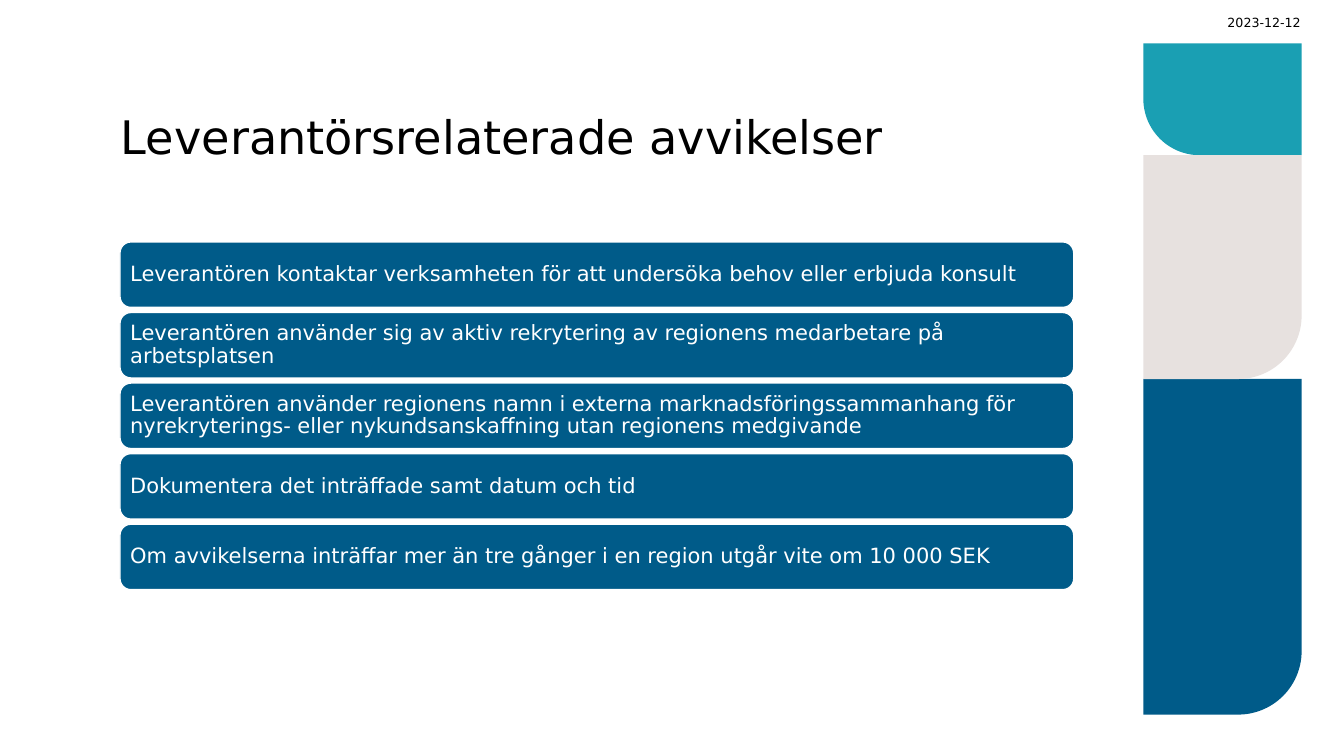
"""Builds a slide listing supplier-related deviations beside a coloured side panel."""
from dataclasses import dataclass
from math import cos, radians, sin

from pptx import Presentation
from pptx.dml.color import RGBColor
from pptx.enum import shapes, text
from pptx.shapes.autoshape import Shape
from pptx.slide import Slide
from pptx.text.text import TextFrame
from pptx.util import Inches, Pt


@dataclass(frozen=True)
class Theme:
    """Colours, font and type sizes of the slide."""
    font: str = "DejaVu Sans"
    black: str = "000000"
    white: str = "FFFFFF"
    teal: str = "1A9FB3"
    sand: str = "E7E1DF"
    blue: str = "005B89"
    title_size: int = 33
    body_size: int = 15
    date_size: int = 9


@dataclass(frozen=True)
class Box:
    """A rectangle in inches."""
    left: float
    top: float
    width: float
    height: float

    def emu(self) -> tuple[int, int, int, int]:
        """Return the rectangle as slide lengths."""
        return (Inches(self.left), Inches(self.top),
                Inches(self.width), Inches(self.height))


@dataclass(frozen=True)
class Block:
    """A side panel block with one rounded corner, counted clockwise from top left."""
    top: float
    height: float
    corner: int
    radius: float
    color: str


THEME = Theme()
BOTTOM_RIGHT, BOTTOM_LEFT = 2, 3
PANEL_LEFT, PANEL_WIDTH = 11.34, 1.57
BLOCKS = [
    Block(0.43, 1.11, BOTTOM_LEFT, 0.56, THEME.teal),
    Block(3.76, 3.33, BOTTOM_RIGHT, 0.63, THEME.blue),
    Block(1.54, 2.22, BOTTOM_RIGHT, 0.63, THEME.sand),
]
TITLE_BOX = Box(1.2, 0.47, 9.45, 1.15)
DATE_BOX = Box(11.92, 0.15, 0.98, 0.15)
FIRST_BAR = Box(1.19, 2.4, 9.46, 0.65)
BAR_PITCH = 0.7
DEVIATIONS = [
    "Leverantören kontaktar verksamheten för att undersöka behov eller erbjuda konsult",
    "Leverantören använder sig av aktiv rekrytering av regionens medarbetare på arbetsplatsen",
    "Leverantören använder regionens namn i externa marknadsföringssammanhang för "
    "nyrekryterings- eller nykundsanskaffning utan regionens medgivande",
    "Dokumentera det inträffade samt datum och tid",
    "Om avvikelserna inträffar mer än tre gånger i en region utgår vite om 10 000 SEK",
]


def write(tf: TextFrame, content: str, size: int, color: str,
          anchor: text.MSO_ANCHOR, align: text.PP_ALIGN = text.PP_ALIGN.LEFT,
          spacing: float = 1.0, inset: tuple[float, float] = (0, 0)) -> None:
    """Fill a text frame with one formatted paragraph."""
    tf.text = content
    tf.word_wrap = True
    tf.vertical_anchor = anchor
    tf.margin_left = tf.margin_right = Inches(inset[0])
    tf.margin_top = tf.margin_bottom = Inches(inset[1])
    p = tf.paragraphs[0]
    p.alignment = align
    p.line_spacing = spacing
    for r in p.runs:
        r.font.name = THEME.font
        r.font.size = Pt(size)
        r.font.color.rgb = RGBColor.from_string(color)


def paint(sp: Shape, color: str) -> None:
    """Give a shape a flat fill without shadow."""
    sp.shadow.inherit = False
    sp.fill.solid()
    sp.fill.fore_color.rgb = RGBColor.from_string(color)


def outline(block: Block) -> list[tuple[int, int]]:
    """Return the block's outline, clockwise from the top left."""
    right, bottom = PANEL_LEFT + PANEL_WIDTH, block.top + block.height
    corners = [(PANEL_LEFT, block.top), (right, block.top),
               (right, bottom), (PANEL_LEFT, bottom)]
    points = []
    for i, (x, y) in enumerate(corners):
        if i != block.corner:
            points.append((x, y))
            continue
        cx = x + block.radius * (1 if x == PANEL_LEFT else -1)
        cy = y + block.radius * (1 if y == block.top else -1)
        start = 180 + 90 * i
        for angle in range(start, start + 91, 3):
            points.append((cx + block.radius * cos(radians(angle)),
                           cy + block.radius * sin(radians(angle))))
    return [(Inches(x), Inches(y)) for x, y in points]


def add_block(s: Slide, block: Block) -> None:
    """Draw one side panel block."""
    first, *rest = outline(block)
    builder = s.shapes.build_freeform(*first)
    builder.add_line_segments(rest, close=True)
    sp = builder.convert_to_shape()
    paint(sp, block.color)
    sp.line.fill.background()


def add_bar(s: Slide, box: Box, content: str) -> None:
    """Draw one rounded bar with its text."""
    sp = s.shapes.add_shape(shapes.MSO_SHAPE.ROUNDED_RECTANGLE, *box.emu())
    paint(sp, THEME.blue)
    sp.line.color.rgb = RGBColor.from_string(THEME.white)
    sp.line.width = Pt(1)
    write(sp.text_frame, content, THEME.body_size, THEME.white,
          text.MSO_ANCHOR.MIDDLE, spacing=0.9, inset=(0.07, 0.06))


def main() -> None:
    """Build and save the slide."""
    prs = Presentation()
    prs.slide_width, prs.slide_height = Inches(13.33), Inches(7.5)
    s = prs.slides.add_slide(prs.slide_layouts[6])
    for block in BLOCKS:
        add_block(s, block)
    title = s.shapes.add_textbox(*TITLE_BOX.emu())
    write(title.text_frame, "Leverantörsrelaterade avvikelser", THEME.title_size,
          THEME.black, text.MSO_ANCHOR.BOTTOM, spacing=1.1)
    date = s.shapes.add_textbox(*DATE_BOX.emu())
    write(date.text_frame, "2023-12-12", THEME.date_size, THEME.black,
          text.MSO_ANCHOR.MIDDLE, align=text.PP_ALIGN.RIGHT)
    for i, deviation in enumerate(DEVIATIONS):
        bar = Box(FIRST_BAR.left, FIRST_BAR.top + i * BAR_PITCH,
                  FIRST_BAR.width, FIRST_BAR.height)
        add_bar(s, bar, deviation)
    prs.save("out.pptx")


if __name__ == "__main__":
    main()
